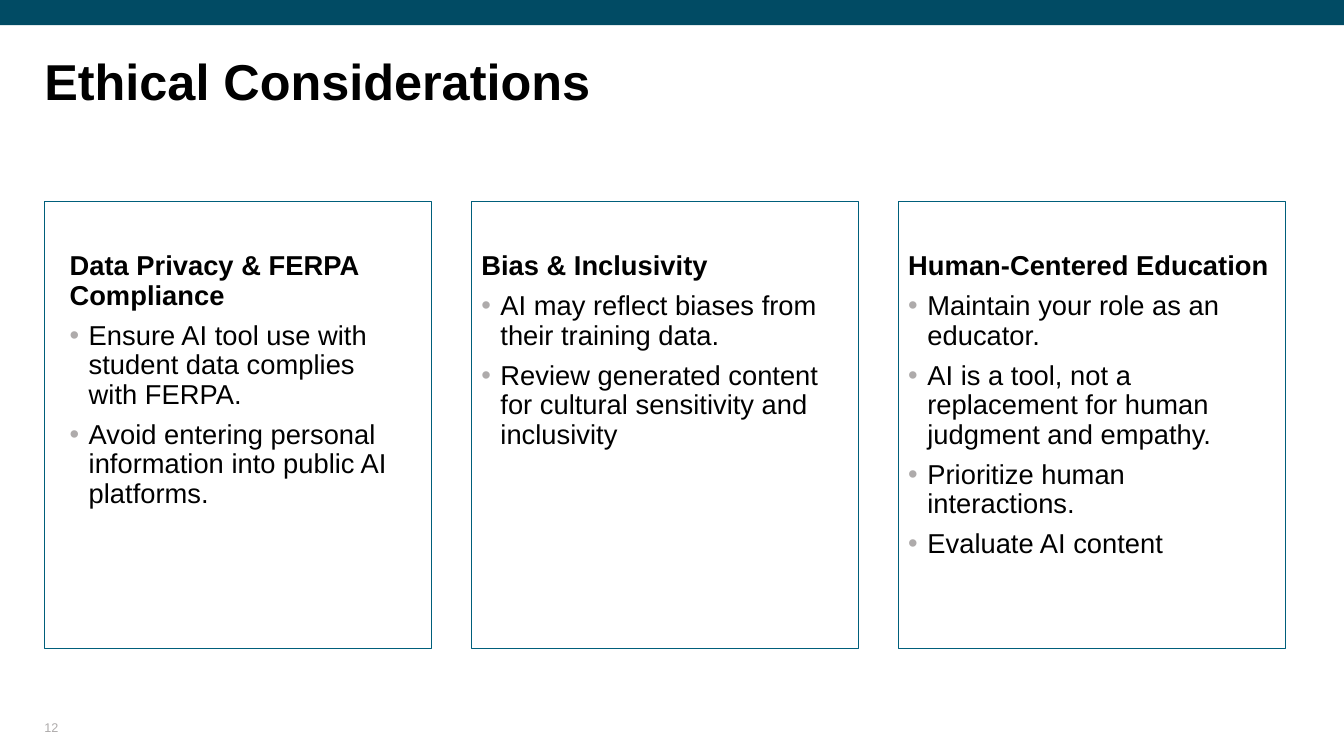
import pptx
import pptx.dml.color
import pptx.enum.shapes
import pptx.enum.text
import pptx.oxml.ns
import pptx.util
from lxml import etree

Inches = pptx.util.Inches
Pt = pptx.util.Pt
RGBColor = pptx.dml.color.RGBColor
ANCHOR = pptx.enum.text.MSO_ANCHOR
RECTANGLE = pptx.enum.shapes.MSO_SHAPE.RECTANGLE

BLACK = RGBColor(0x00, 0x00, 0x00)
GREY = RGBColor(0xAE, 0xAB, 0xAB)
DARK_TEAL = RGBColor(0x01, 0x4B, 0x64)
TEAL = RGBColor(0x00, 0x5F, 0x7B)

MARGIN = 0.44
CARD_TOP, CARD_WIDTH, CARD_HEIGHT = 2, 3.84, 4.43
CARDS_RIGHT = 12.75

# heading, side inset, bullets
CARDS = [
    ("Data Privacy & FERPA Compliance", 0.25, [
        "Ensure AI tool use with student data complies with FERPA.",
        "Avoid entering personal information into public AI platforms.",
    ]),
    ("Bias & Inclusivity", 0.1, [
        "AI may reflect biases from their training data.",
        "Review generated content for cultural sensitivity and inclusivity",
    ]),
    ("Human-Centered Education", 0.1, [
        "Maintain your role as an educator.",
        "AI is a tool, not a replacement for human judgment and empathy.",
        "Prioritize human interactions.",
        "Evaluate AI content",
    ]),
]


def add_bullet(p, indent=0.19):
    pPr = p._p.get_or_add_pPr()
    pPr.set("marL", str(Inches(indent)))
    pPr.set("indent", str(-Inches(indent)))
    qn = pptx.oxml.ns.qn
    color = etree.SubElement(pPr, qn("a:buClr"))
    etree.SubElement(color, qn("a:srgbClr"), val=str(GREY))
    etree.SubElement(pPr, qn("a:buFont"), typeface="Arial")
    etree.SubElement(pPr, qn("a:buChar"), char="•")


def write(p, text, size=19.5, color=BLACK, bold=False, line_spacing=0.9,
          bullet=False):
    """Fill one paragraph with formatted text."""
    p.alignment = pptx.enum.text.PP_ALIGN.LEFT
    p.line_spacing = line_spacing
    if bullet:
        p.space_before = Pt(7.5)
        add_bullet(p)
    r = p.add_run()
    r.text = text
    r.font.name = "Arial"
    r.font.size = Pt(size)
    r.font.bold = bold
    r.font.color.rgb = color


class SlideBuilder:
    def __init__(self, prs):
        self.slide = prs.slides.add_slide(prs.slide_layouts[6])

    def frame(self, sp, insets=(0, 0, 0, 0), anchor=ANCHOR.TOP):
        """Set wrapping, insets (left, top, right, bottom) and anchor."""
        tf = sp.text_frame
        tf.word_wrap = True
        tf.margin_left, tf.margin_top, tf.margin_right, tf.margin_bottom = map(
            Inches, insets)
        tf.vertical_anchor = anchor
        return tf

    def rectangle(self, *box, fill=None, line=None):
        sp = self.slide.shapes.add_shape(RECTANGLE, *map(Inches, box))
        sp.shadow.inherit = False
        if fill is None:
            sp.fill.background()
        else:
            sp.fill.solid()
            sp.fill.fore_color.rgb = fill
        if line is None:
            sp.line.fill.background()
        else:
            sp.line.color.rgb = line
            sp.line.width = Pt(0.75)
        return sp

    def text(self, text, *box, anchor=ANCHOR.TOP, **style):
        sp = self.slide.shapes.add_textbox(*map(Inches, box))
        write(self.frame(sp, anchor=anchor).paragraphs[0], text, **style)

    def card(self, left, heading, inset, bullets):
        sp = self.rectangle(left, CARD_TOP, CARD_WIDTH, CARD_HEIGHT, line=TEAL)
        tf = self.frame(sp, (inset, 0.5, inset, 0.05))
        write(tf.paragraphs[0], heading, bold=True)
        for bullet in bullets:
            write(tf.add_paragraph(), bullet, bullet=True)


def main():
    prs = pptx.Presentation()
    prs.slide_width, prs.slide_height = Inches(13.33), Inches(7.5)
    builder = SlideBuilder(prs)
    builder.rectangle(0, 0, 13.33, 0.25, fill=DARK_TEAL)
    builder.text("Ethical Considerations", MARGIN, 0.57, 12.32, 1.27,
                 size=36, bold=True)
    pitch = (CARDS_RIGHT - CARD_WIDTH - MARGIN) / (len(CARDS) - 1)
    for i, card in enumerate(CARDS):
        builder.card(MARGIN + i * pitch, *card)
    builder.text("12", MARGIN, 7.05, 3, 0.24, anchor=ANCHOR.BOTTOM,
                 size=9, color=GREY, line_spacing=1.0)
    prs.save("out.pptx")


if __name__ == "__main__":
    main()
